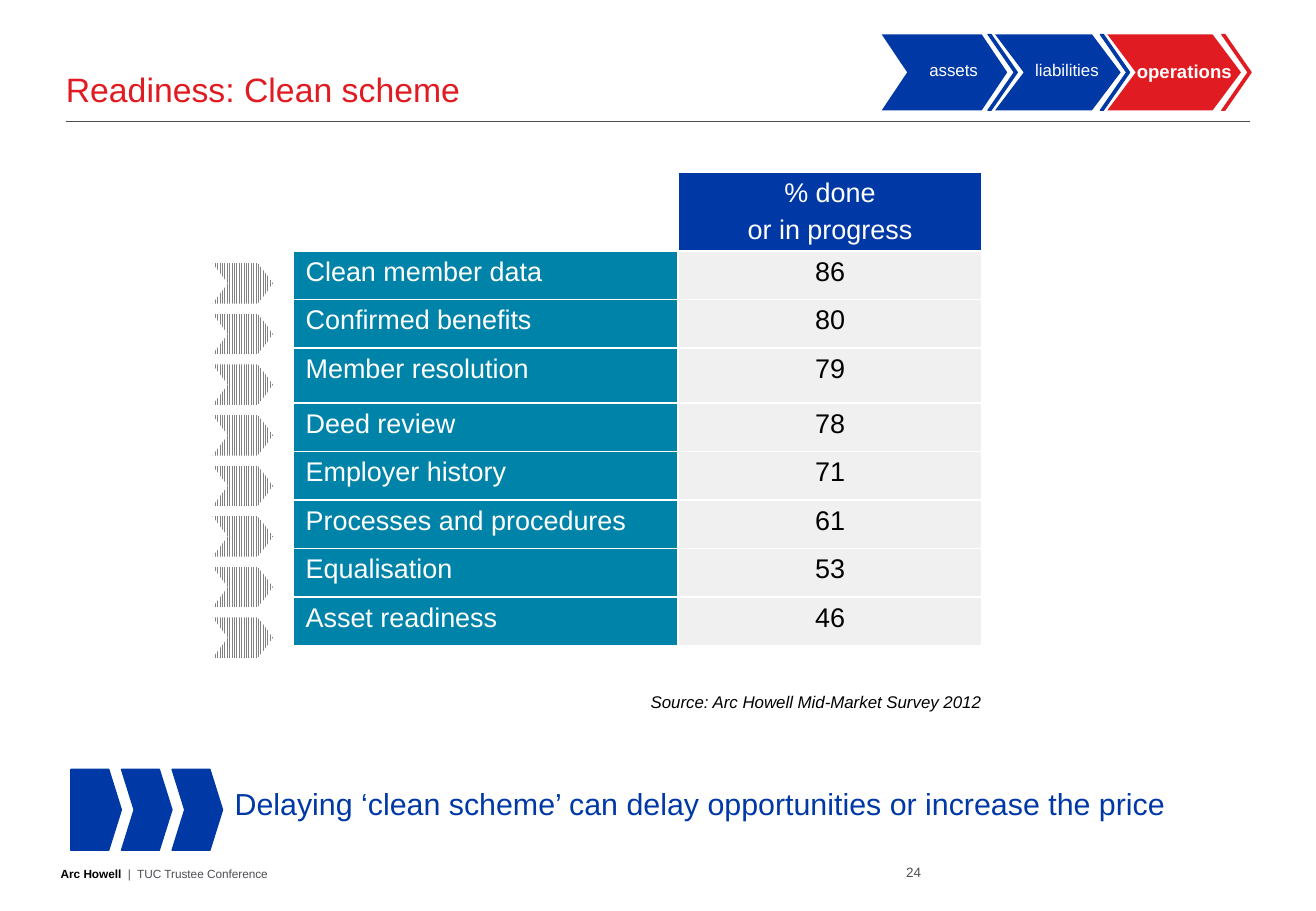
from lxml import etree
from pptx import Presentation
from pptx.dml.color import RGBColor
from pptx.enum.dml import MSO_PATTERN
from pptx.enum.shapes import MSO_CONNECTOR, MSO_SHAPE
from pptx.enum.text import MSO_ANCHOR, MSO_AUTO_SIZE, PP_ALIGN
from pptx.oxml.ns import qn
from pptx.util import Pt

LEFT, CENTER, RIGHT = PP_ALIGN.LEFT, PP_ALIGN.CENTER, PP_ALIGN.RIGHT
TOP, BOTTOM = MSO_ANCHOR.TOP, MSO_ANCHOR.BOTTOM
CHEVRON, PENTAGON = MSO_SHAPE.CHEVRON, MSO_SHAPE.PENTAGON
LIGHT_VERTICAL = MSO_PATTERN.LIGHT_VERTICAL
NO_AUTOFIT = MSO_AUTO_SIZE.NONE
STRAIGHT = MSO_CONNECTOR.STRAIGHT

SCALE = 7620
SLIDE_SIZE = (1300, 900)
FONT = "Arial"
BLUE, RED, TEAL = "0039A6", "E11B22", "0083A9"
WHITE, BLACK, PALE = "FFFFFF", "000000", "F0F0F0"
SLATE, GRAY = "4D4F53", "808080"

TITLE = ("Readiness: Clean scheme", {"size": 20, "color": RED})
TITLE_BOX = (65, 40, 1170, 68)
RULE = (65, 120, 1235, 120)

HEADER = ["% done", "or in progress"]
RESULTS = [
    ("Clean member data", 86),
    ("Confirmed benefits", 80),
    ("Member resolution", 79),
    ("Deed review", 78),
    ("Employer history", 71),
    ("Processes and procedures", 61),
    ("Equalisation", 53),
    ("Asset readiness", 46),
]
TABLE_ORIGIN = (290, 170)
COLUMN_WIDTHS = [380, 300]
ROW_HEIGHTS = [78, 48, 48, 54, 48, 48, 48, 48, 48]

MARKER_BOX, MARKER_PITCH = (210, 260, 60, 40), 50
BANNER_BOX, BANNER_PITCH = (70, 760, 50, 80), 50
BANNER_SHAPES = [PENTAGON, CHEVRON, CHEVRON]

TRACKER_TOP, TRACKER_HEIGHT = 34, 75
TRACKER = [
    (1094, 132, 0.374, RED, False),
    (983, 124, 0.377, BLUE, False),
    (871, 124, 0.336, BLUE, False),
    (1207, 29, 0.897, RED, True),
    (1087, 29, 0.897, BLUE, True),
    (976, 29, 0.897, BLUE, True),
]

SMALL = {"size": 10, "color": WHITE}
TEXTS = [
    ((60, 830, 598, 40), LEFT, BOTTOM, 0, [
        ("Arc Howell", {"size": 7, "color": BLACK, "bold": True}),
        ("  |  TUC Trustee Conference", {"size": 7, "color": SLATE})]),
    ((868, 830, 42, 40), RIGHT, BOTTOM, 0, [("24", {"size": 8, "color": SLATE})]),
    ((220, 770, 1020, 48), LEFT, TOP, 12, [
        ("Delaying ‘clean scheme’ can delay opportunities or increase the price",
         {"size": 18, "color": BLUE})]),
    ((631, 677, 362, 32), LEFT, TOP, 12, [
        ("Source: Arc Howell Mid-Market Survey 2012",
         {"size": 10, "color": BLACK, "italic": True})]),
    ((1104, 53, 132, 34), CENTER, TOP, 12, [
        ("operations", {"size": 11, "color": WHITE, "bold": True})]),
    ((1002, 53, 104, 32), CENTER, TOP, 12, [("liabilities", SMALL)]),
    ((890, 53, 104, 32), CENTER, TOP, 12, [("assets", SMALL)]),
]


def px(*lengths):
    return [length * SCALE for length in lengths]


def rgb(value):
    return RGBColor.from_string(value)


def add_run(paragraph, text, style):
    run = paragraph.add_run()
    run.text = text
    run.font.name = FONT
    for name, value in style.items():
        if name == "color":
            run.font.color.rgb = rgb(value)
        else:
            setattr(run.font, name, Pt(value) if name == "size" else value)


def add_chevron(shapes, kind, box, adjustment, color, outlined=False):
    shape = shapes.add_shape(kind, *px(*box))
    shape.shadow.inherit = False
    shape.adjustments[0] = adjustment
    shape.fill.solid()
    shape.fill.fore_color.rgb = rgb(color)
    if outlined:
        shape.line.color.rgb = rgb(color)
        shape.line.width = Pt(0.75)
    else:
        shape.line.fill.background()
    return shape


def add_text(slide, box, alignment, anchor, inset, runs):
    frame = slide.shapes.add_textbox(*px(*box)).text_frame
    values = {"word_wrap": True, "vertical_anchor": anchor,
              "margin_left": inset * SCALE, "margin_right": inset * SCALE,
              "margin_top": inset * SCALE // 2, "margin_bottom": inset * SCALE // 2}
    for name, value in values.items():
        setattr(frame, name, value)
    paragraph = frame.paragraphs[0]
    paragraph.alignment = alignment
    for text, style in runs:
        add_run(paragraph, text, style)


def format_cell(cell, lines, alignment, text_color, fill):
    properties = cell._tc.get_or_add_tcPr()
    for side in ("lnL", "lnR", "lnT", "lnB"):
        line = etree.SubElement(properties, qn(f"a:{side}"), w=str(Pt(1)))
        solid = etree.SubElement(line, qn("a:solidFill"))
        etree.SubElement(solid, qn("a:srgbClr"), val=WHITE)
    if fill:
        cell.fill.solid()
        cell.fill.fore_color.rgb = rgb(fill)
    else:
        cell.fill.background()
    frame = cell.text_frame
    for index, text in enumerate(lines):
        paragraph = frame.add_paragraph() if index else frame.paragraphs[0]
        paragraph.alignment = alignment
        if index:
            paragraph.space_before = Pt(4)
        add_run(paragraph, text, {"size": 16, "color": text_color})


def add_results(slide):
    size = (sum(COLUMN_WIDTHS), sum(ROW_HEIGHTS))
    table = slide.shapes.add_table(len(ROW_HEIGHTS), len(COLUMN_WIDTHS),
                                   *px(*TABLE_ORIGIN, *size)).table
    table.first_row = table.horz_banding = False
    for column, width in zip(table.columns, px(*COLUMN_WIDTHS)):
        column.width = width
    for row, height in zip(table.rows, px(*ROW_HEIGHTS)):
        row.height = height
    format_cell(table.cell(0, 0), [], LEFT, WHITE, None)
    format_cell(table.cell(0, 1), HEADER, CENTER, WHITE, BLUE)
    for row, (label, percent) in enumerate(RESULTS, 1):
        format_cell(table.cell(row, 0), [label], LEFT, WHITE, TEAL)
        format_cell(table.cell(row, 1), [str(percent)], CENTER, BLACK, PALE)


def add_title(slide):
    title = slide.shapes.title
    title.left, title.top, title.width, title.height = px(*TITLE_BOX)
    values = {"auto_size": NO_AUTOFIT, "word_wrap": True, "vertical_anchor": BOTTOM,
              "margin_left": 0, "margin_right": 0, "margin_top": 0, "margin_bottom": 0}
    for name, value in values.items():
        setattr(title.text_frame, name, value)
    paragraph = title.text_frame.paragraphs[0]
    paragraph.alignment = LEFT
    add_run(paragraph, *TITLE)


def main():
    presentation = Presentation()
    presentation.slide_width, presentation.slide_height = px(*SLIDE_SIZE)
    slide = presentation.slides.add_slide(presentation.slide_layouts[5])
    add_title(slide)
    rule = slide.shapes.add_connector(STRAIGHT, *px(*RULE))
    rule.line.color.rgb = rgb(SLATE)
    rule.line.width = Pt(0.75)
    etree.SubElement(rule._element.spPr, qn("a:effectLst"))
    add_results(slide)

    left, top, width, height = MARKER_BOX
    for index in range(len(RESULTS)):
        box = (left, top + index * MARKER_PITCH, width, height)
        marker = add_chevron(slide.shapes, CHEVRON, box, 0.377, GRAY)
        marker.fill.patterned()
        marker.fill.pattern = LIGHT_VERTICAL
        marker.fill.fore_color.rgb = rgb(GRAY)
        marker.fill.back_color.rgb = rgb(WHITE)

    banner = slide.shapes.add_group_shape()
    left, top, width, height = BANNER_BOX
    for index, kind in enumerate(BANNER_SHAPES):
        box = (left + index * BANNER_PITCH, top, width, height)
        add_chevron(banner.shapes, kind, box, 0.25, BLUE, True)

    for left, width, adjustment, color, outlined in TRACKER:
        box = (left, TRACKER_TOP, width, TRACKER_HEIGHT)
        add_chevron(slide.shapes, CHEVRON, box, adjustment, color, outlined)
    for text in TEXTS:
        add_text(slide, *text)
    presentation.save("out.pptx")


if __name__ == "__main__":
    main()
